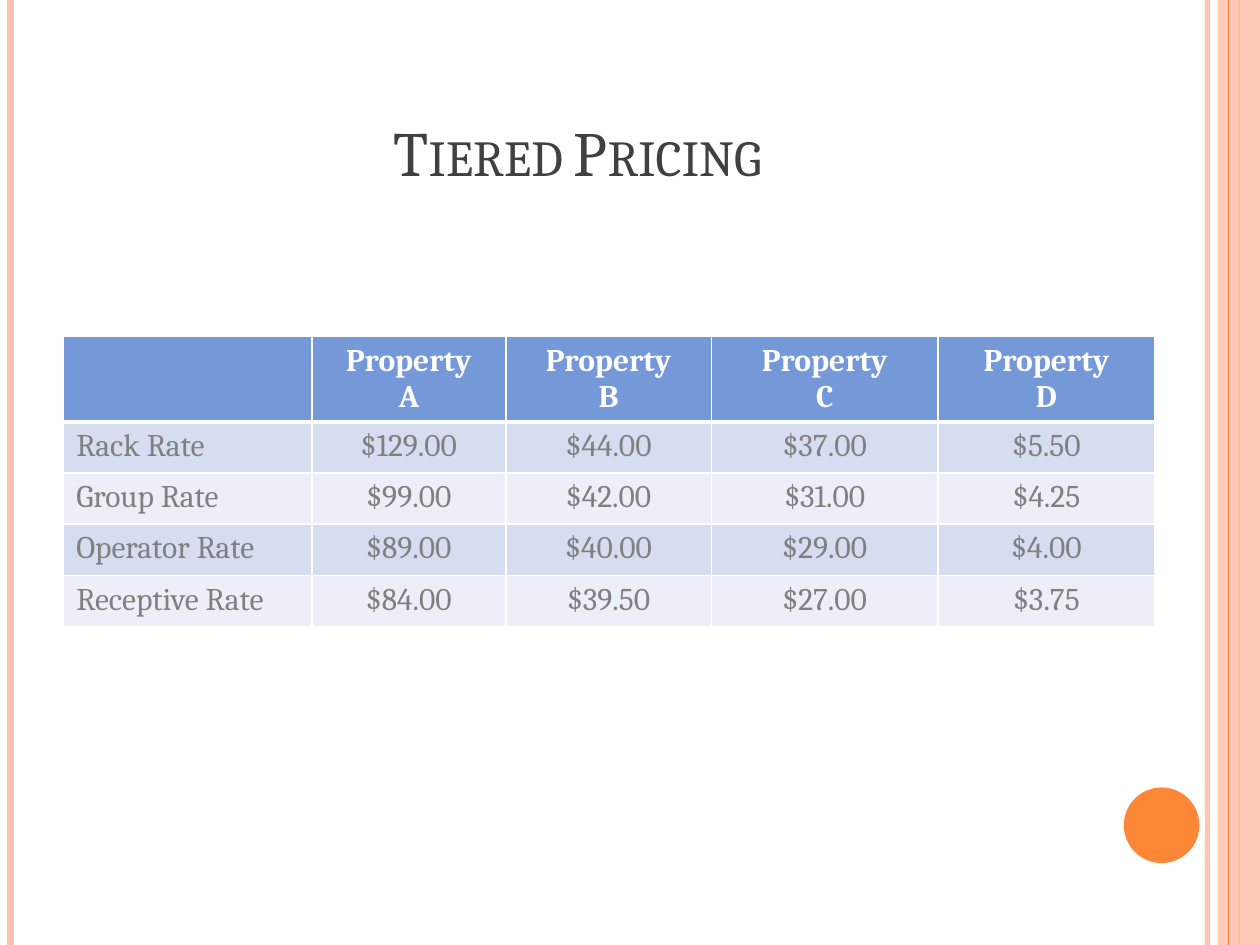
from lxml import etree
from pptx import Presentation
from pptx.dml.color import RGBColor
from pptx.enum.shapes import MSO_CONNECTOR, MSO_SHAPE
from pptx.enum.text import MSO_ANCHOR, MSO_AUTO_SIZE, PP_ALIGN
from pptx.oxml.ns import qn
from pptx.util import Pt

STRAIGHT = MSO_CONNECTOR.STRAIGHT
RECTANGLE, OVAL = MSO_SHAPE.RECTANGLE, MSO_SHAPE.OVAL
BOTTOM = MSO_ANCHOR.BOTTOM
NO_AUTOFIT = MSO_AUTO_SIZE.NONE
LEFT, CENTER = PP_ALIGN.LEFT, PP_ALIGN.CENTER

FONT = "Cambria"
SLIDE_WIDTH, SLIDE_HEIGHT = 720, 540
COLORS = {
    "peach": "FEC3AE",
    "orange": "FE8637",
    "title": "404040",
    "header": "7598D9",
    "odd_row": "D6DDF1",
    "even_row": "ECEFF8",
    "body": "808080",
    "white": "FFFFFF",
}
COLUMN_WIDTHS = [141.8, 110.9, 117.4, 129.6, 123.8]
HEADER_HEIGHT, ROW_HEIGHT = 48, 29.2
PRICES = [
    ["", "Property\nA", "Property\nB", "Property\nC", "Property\nD"],
    ["Rack Rate", "$129.00", "$44.00", "$37.00", "$5.50"],
    ["Group Rate", "$99.00", "$42.00", "$31.00", "$4.25"],
    ["Operator Rate", "$89.00", "$40.00", "$29.00", "$4.00"],
    ["Receptive Rate", "$84.00", "$39.50", "$27.00", "$3.75"],
]


def rgb(name):
    return RGBColor.from_string(COLORS[name])


def set_opacity(shape, percent):
    color = next(shape._element.spPr.iter(qn("a:srgbClr")))
    etree.SubElement(color, qn("a:alpha"), val=str(percent * 1000))


def add_stripe(slide, x, color, width, opacity=100):
    stripe = slide.shapes.add_connector(STRAIGHT, Pt(x), 0, Pt(x), Pt(SLIDE_HEIGHT))
    stripe.line.color.rgb = rgb(color)
    stripe.line.width = Pt(width)
    etree.SubElement(stripe._element.spPr, qn("a:effectLst"))
    if opacity < 100:
        set_opacity(stripe, opacity)


def add_filled_shape(slide, kind, left, top, width, height, color, opacity=100):
    shape = slide.shapes.add_shape(kind, Pt(left), Pt(top), Pt(width), Pt(height))
    shape.shadow.inherit = False
    shape.fill.solid()
    shape.fill.fore_color.rgb = rgb(color)
    shape.line.fill.background()
    if opacity < 100:
        set_opacity(shape, opacity)


def format_paragraph(paragraph, size, color, alignment, bold=False):
    paragraph.alignment = alignment
    font = paragraph.font
    font.name = FONT
    font.size = Pt(size)
    font.bold = bold
    font.color.rgb = rgb(color)


def set_title(slide, text):
    title = slide.shapes.title
    title.left, title.top, title.width, title.height = Pt(36), Pt(21.6), Pt(588), Pt(90)
    frame = title.text_frame
    frame.text = text
    frame.vertical_anchor = BOTTOM
    frame.auto_size = NO_AUTOFIT
    paragraph = frame.paragraphs[0]
    format_paragraph(paragraph, 36, "title", CENTER)
    paragraph.runs[0]._r.get_or_add_rPr().set("cap", "small")


def set_borders(cell, bottom_width):
    properties = cell._tc.get_or_add_tcPr()
    widths = {"a:lnL": 1, "a:lnR": 1, "a:lnT": 1, "a:lnB": bottom_width}
    for position, (tag, width) in enumerate(widths.items()):
        line = etree.Element(qn(tag), w=str(Pt(width)))
        fill = etree.SubElement(line, qn("a:solidFill"))
        etree.SubElement(fill, qn("a:srgbClr"), val=COLORS["white"])
        properties.insert(position, line)


def fill_cell(cell, text, row, column):
    header = row == 0
    cell.text = text
    cell.fill.solid()
    cell.fill.fore_color.rgb = rgb("header" if header else "odd_row" if row % 2 else "even_row")
    set_borders(cell, 3 if header else 1)
    for paragraph in cell.text_frame.paragraphs:
        format_paragraph(
            paragraph,
            18,
            "white" if header else "body",
            CENTER if header or column else LEFT,
            header,
        )


def add_price_table(slide, left, top):
    heights = [HEADER_HEIGHT] + [ROW_HEIGHT] * (len(PRICES) - 1)
    table = slide.shapes.add_table(
        len(PRICES), len(COLUMN_WIDTHS),
        Pt(left), Pt(top), Pt(sum(COLUMN_WIDTHS)), Pt(sum(heights)),
    ).table
    for column, width in zip(table.columns, COLUMN_WIDTHS):
        column.width = Pt(width)
    for row, height in zip(table.rows, heights):
        row.height = Pt(height)
    for row, texts in enumerate(PRICES):
        for column, text in enumerate(texts):
            fill_cell(table.cell(row, column), text, row, column)


def main():
    presentation = Presentation()
    presentation.slide_width, presentation.slide_height = Pt(SLIDE_WIDTH), Pt(SLIDE_HEIGHT)
    slide = presentation.slides.add_slide(presentation.slide_layouts[5])

    add_stripe(slide, 690, "peach", 3, 93)
    add_stripe(slide, 6, "peach", 4.5)
    add_stripe(slide, 708, "orange", 1.5)
    add_filled_shape(slide, RECTANGLE, 696, 0, 24, SLIDE_HEIGHT, "peach", 87)
    add_stripe(slide, 702, "orange", 0.75)
    add_filled_shape(slide, OVAL, 642.2, 450, 43.2, 43.2, "orange")
    set_title(slide, "Tiered Pricing")
    add_price_table(slide, 36.4, 192.4)

    presentation.save("out.pptx")


if __name__ == "__main__":
    main()
